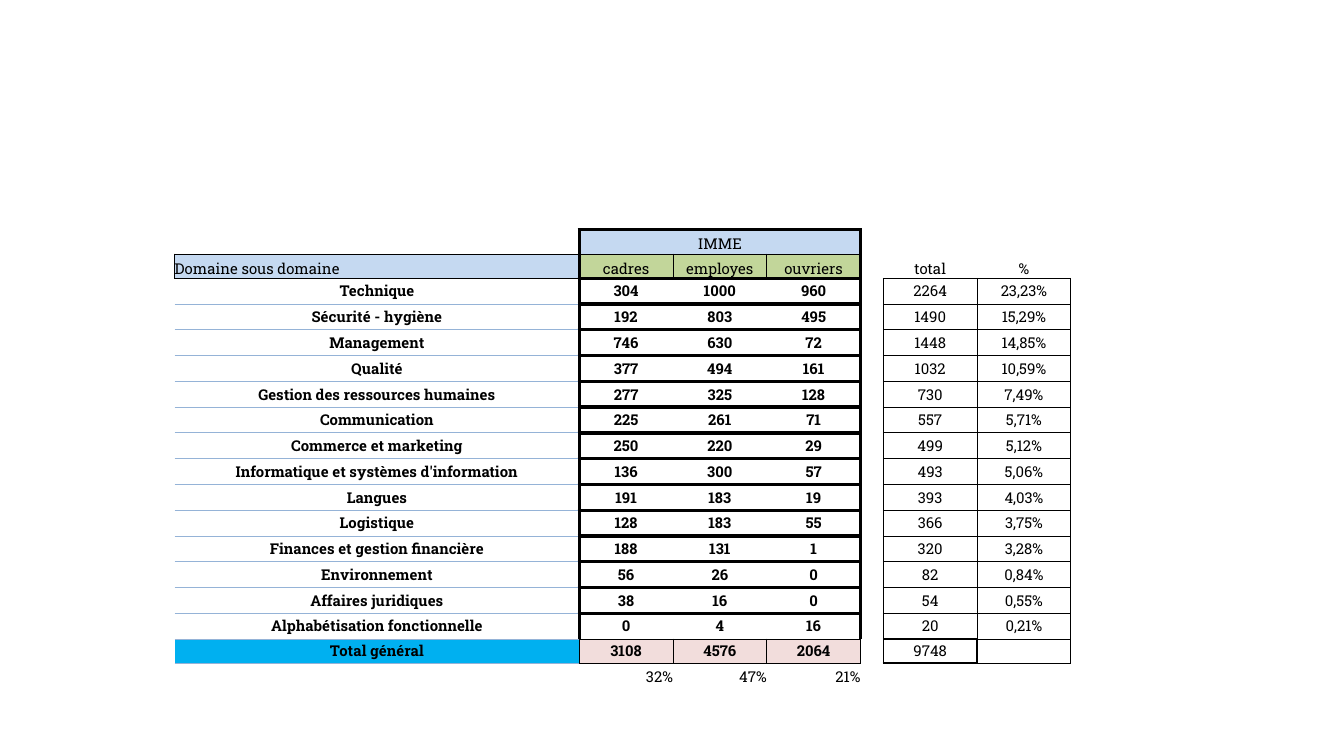
from collections import defaultdict
from dataclasses import dataclass

from lxml import etree
from pptx import Presentation
from pptx.dml.color import RGBColor
from pptx.enum.text import MSO_ANCHOR, PP_ALIGN
from pptx.oxml.ns import qn
from pptx.util import Inches, Pt

LEFT, CENTER, RIGHT = PP_ALIGN.LEFT, PP_ALIGN.CENTER, PP_ALIGN.RIGHT
MIDDLE, BOTTOM = MSO_ANCHOR.MIDDLE, MSO_ANCHOR.BOTTOM
NO_GRID_STYLE = "{2D5ABB26-0587-4C30-8999-92F81FD0307C}"


@dataclass(frozen=True)
class Theme:
    font: str = "Roboto Slab"
    size: float = 8
    ink: str = "000000"
    rule: str = "95B3D7"
    header: str = "C5D9F1"
    category: str = "C2D69A"
    total_label: str = "00B0F0"
    total: str = "F2DDDC"
    thin: float = 0.5
    medium: float = 1
    thick: float = 2


THEME = Theme()

CATEGORIES = ["cadres", "employes", "ouvriers"]
DOMAINS = [
    ("Technique", 304, 1000, 960),
    ("Sécurité - hygiène", 192, 803, 495),
    ("Management", 746, 630, 72),
    ("Qualité", 377, 494, 161),
    ("Gestion des ressources humaines", 277, 325, 128),
    ("Communication", 225, 261, 71),
    ("Commerce et marketing", 250, 220, 29),
    ("Informatique et systèmes d'information", 136, 300, 57),
    ("Langues", 191, 183, 19),
    ("Logistique", 128, 183, 55),
    ("Finances et gestion financière", 188, 131, 1),
    ("Environnement", 56, 26, 0),
    ("Affaires juridiques", 38, 16, 0),
    ("Alphabétisation fonctionnelle", 0, 4, 16),
]
FIRST = 2                       # first domain row, below the two header rows
TOTAL = FIRST + len(DOMAINS)    # row of the grand total
SHARE = TOTAL + 1               # row of the category percentages
LABEL_WIDTH, GAP_WIDTH = 3.01, 0.17
ROW_HEIGHTS = [0.18, 0.18] + [2.68 / len(DOMAINS)] * len(DOMAINS) + [0.18, 0.17]


def table_rows():
    """Return the texts of all rows, with totals and percentages worked out."""
    sums = [sum(column) for column in list(zip(*DOMAINS))[1:]]
    grand = sum(sums)
    rows = [["", "IMME", "", "", "", "", ""],
            ["Domaine sous domaine", *CATEGORIES, "", "total", "%"]]
    for name, *counts in DOMAINS:
        percent = f"{sum(counts) / grand:.2%}".replace(".", ",")
        rows.append([name, *counts, "", sum(counts), percent])
    rows.append(["Total général", *sums, "", grand, ""])
    rows.append(["", *(f"{n / grand:.0%}" for n in sums), "", "", ""])
    return rows


def cell_fill(row, col):
    if row == 0 and 1 <= col <= 3 or (row, col) == (1, 0):
        return THEME.header
    if row == 1 and 1 <= col <= 3:
        return THEME.category
    if row == TOTAL and col <= 3:
        return THEME.total if col else THEME.total_label
    return None


def format_cell(cell, text, row, col):
    cell.margin_left = cell.margin_right = cell.margin_top = cell.margin_bottom = 0
    cell.vertical_anchor = MIDDLE if FIRST <= row <= TOTAL else BOTTOM
    color = cell_fill(row, col)
    if color:
        cell.fill.solid()
        cell.fill.fore_color.rgb = RGBColor.from_string(color)
    else:
        cell.fill.background()
    p = cell.text_frame.paragraphs[0]
    p.text = str(text)
    p.alignment = LEFT if (row, col) == (1, 0) else RIGHT if row == SHARE else CENTER
    for r in p.runs:
        r.font.name, r.font.size = THEME.font, Pt(THEME.size)
        r.font.bold = FIRST <= row <= TOTAL and col <= 3
        r.font.color.rgb = RGBColor.from_string(THEME.ink)
    if not p.runs:
        etree.SubElement(p._p, qn("a:endParaRPr"), sz=str(int(THEME.size * 100)))


def table_edges():
    """Map (row, column) to its border sides, each as (width, colour)."""
    edges = defaultdict(dict)

    def horizontal(y, cols, width, color=THEME.ink):
        for col in cols:
            edges[y - 1, col]["B"] = edges[y, col]["T"] = (width, color)

    def vertical(x, rows, width):
        for row in rows:
            edges[row, x - 1]["R"] = edges[row, x]["L"] = (width, THEME.ink)

    counts, results, body = range(1, 4), range(5, 7), range(FIRST, TOTAL)
    horizontal(0, counts, THEME.thick)
    horizontal(1, range(4), THEME.thin)
    horizontal(FIRST, [0], THEME.thin)
    for y in range(FIRST, SHARE + 1):
        if y > FIRST:
            horizontal(y, [0], THEME.thin, THEME.rule)
        horizontal(y, counts, THEME.thick if y < TOTAL else THEME.thin)
        horizontal(y, results, THEME.thin)
        if y >= TOTAL:
            horizontal(y, [5], THEME.medium)

    vertical(0, [1], THEME.thin)
    for x in (1, 4):
        vertical(x, range(TOTAL), THEME.thick)
    for x in range(1, 5):
        vertical(x, [TOTAL], THEME.thin)
    for x in (2, 3):
        vertical(x, [1], THEME.thin)
    for x in (5, 6, 7):
        vertical(x, body, THEME.thin)
        vertical(x, [TOTAL], THEME.thin if x == 7 else THEME.medium)
    edges[0, 1]["R"] = edges[0, 3]["R"]     # the merged heading
    return edges


def draw_borders(cell, sides):
    tc_pr = cell._tc.get_or_add_tcPr()
    for i, side in enumerate("LRTB"):
        ln = etree.Element(qn(f"a:ln{side}"))
        if side in sides:
            width, color = sides[side]
            ln.set("w", str(Pt(width)))
            fill = etree.SubElement(ln, qn("a:solidFill"))
            etree.SubElement(fill, qn("a:srgbClr"), val=color)
        else:
            etree.SubElement(ln, qn("a:noFill"))
        tc_pr.insert(i, ln)


def add_training_table(s, left, top, width, height):
    rows = table_rows()
    figure_width = (width - LABEL_WIDTH - GAP_WIDTH) / 5
    col_widths = [LABEL_WIDTH, *[figure_width] * 3, GAP_WIDTH, *[figure_width] * 2]
    frame = s.shapes.add_table(len(rows), len(col_widths), Inches(left),
                               Inches(top), Inches(width), Inches(height))
    table = frame.table
    table.first_row = table.horz_banding = False
    table._tbl.tblPr.find(qn("a:tableStyleId")).text = NO_GRID_STYLE
    for column, col_width in zip(table.columns, col_widths):
        column.width = Inches(col_width)
    for line, share in zip(table.rows, ROW_HEIGHTS):
        line.height = Inches(height * share / sum(ROW_HEIGHTS))
    edges = table_edges()
    for row, texts in enumerate(rows):
        for col, text in enumerate(texts):
            cell = table.cell(row, col)
            format_cell(cell, text, row, col)
            draw_borders(cell, edges[row, col])
    table.cell(0, 1).merge(table.cell(0, 3))


def main():
    prs = Presentation()
    prs.slide_width = Inches(10)
    prs.slide_height = prs.slide_width * 9 // 16
    s = prs.slides.add_slide(prs.slide_layouts[6])
    add_training_table(s, 1.3, 1.71, 6.67, 3.4)
    prs.save("out.pptx")


if __name__ == "__main__":
    main()
